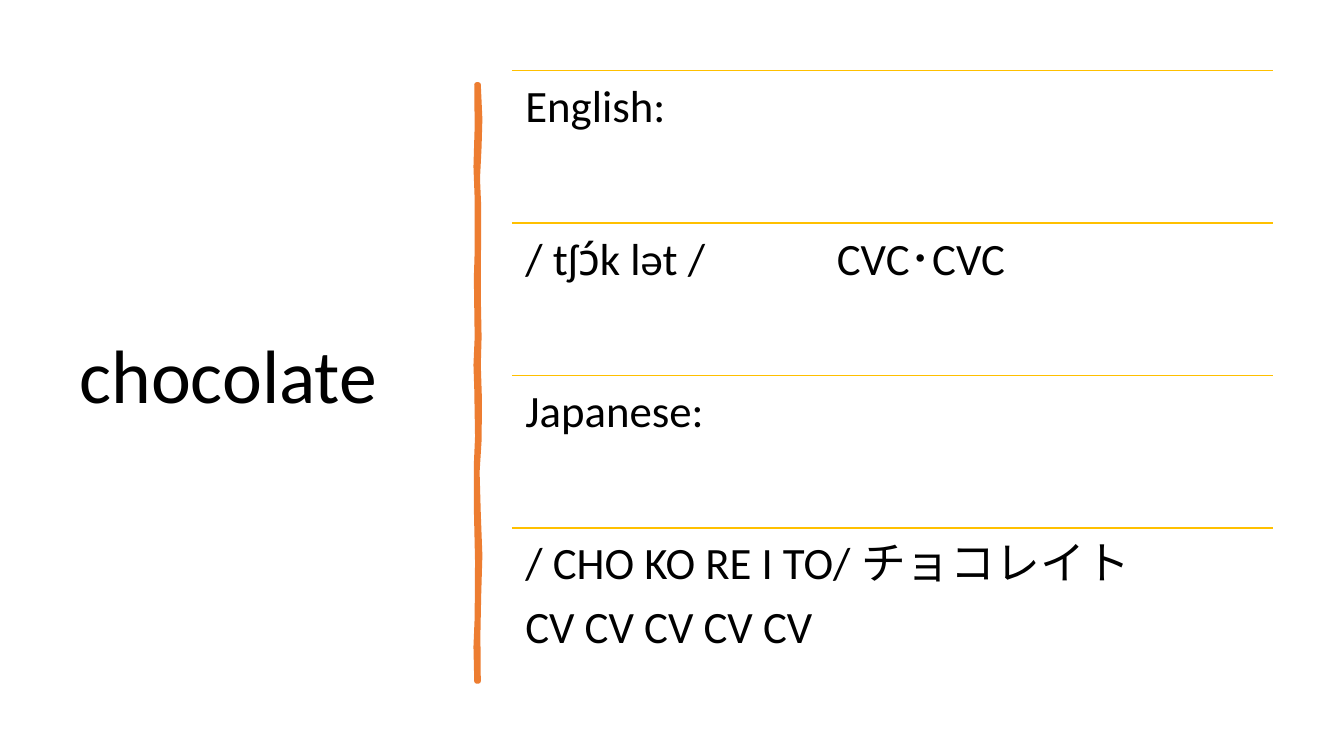
from pptx import Presentation
from pptx.util import Cm, Pt
from pptx.dml.color import RGBColor as RGB
from pptx.enum.shapes import MSO_CONNECTOR as Conn
from pptx.enum.text import MSO_ANCHOR as Anchor, MSO_AUTO_SIZE as Fit, PP_ALIGN as Align
from lxml import etree

INK = {"text": "000000", "bar": "ED7D31", "rule": "FFC000"}
NS = "{http://schemas.openxmlformats.org/drawingml/2006/main}"


def style(par, size):
    par.alignment = Align.LEFT
    par.line_spacing = 0.9
    for run in par.runs:
        run.font.size = Pt(size)
        run.font.name = "Calibri"
        run.font.color.rgb = RGB.from_string(INK["text"])


deck = Presentation()
deck.slide_width, deck.slide_height = Cm(33.87), Cm(19.05)
slide = deck.slides.add_slide(deck.slide_layouts[5])
shapes = slide.shapes

title = shapes.title
title.left, title.top, title.width, title.height = Cm(1.75), Cm(1.78), Cm(9.5), Cm(15.52)
frame = title.text_frame
frame.text = "chocolate"
frame.word_wrap = True
frame.auto_size = Fit.NONE
frame.vertical_anchor = Anchor.MIDDLE
style(frame.paragraphs[0], 54)

right = [(1206, 213), (1210, 300), (1208, 370), (1204, 450), (1207, 520), (1206, 747),
         (1208, 850), (1206, 920), (1209, 1010), (1208, 1110), (1203, 1190), (1206, 1295),
         (1210, 1400), (1207, 1500), (1205, 1600), (1206, 1717)]
left = [(1201, 1717), (1199, 1630), (1202, 1557), (1203, 1415), (1200, 1280), (1200, 1170),
        (1203, 1100), (1201, 980), (1199, 920), (1202, 851), (1200, 700), (1202, 635),
        (1202, 500), (1199, 420), (1202, 320), (1201, 213)]
pen = shapes.build_freeform(*right[0], scale=Cm(1) / 100)
pen.add_line_segments(right[1:] + left, close=True)
bar = pen.convert_to_shape()
bar.shadow.inherit = False
bar.fill.solid()
bar.fill.fore_color.rgb = RGB.from_string(INK["bar"])
bar.line.color.rgb = RGB.from_string(INK["bar"])
bar.line.width = Pt(3.25)
etree.SubElement(bar.line._get_or_add_ln(), NS + "round")

rows = [
    ["English:"],
    ["/ tʃɔ́k lət /\tCVC･CVC"],
    ["Japanese:"],
    ["/ CHO KO RE I TO/ チョコレイト", "CV CV CV CV CV"],
]
x, y, wide, step = 12.9, 1.78, 19.18, 3.84
for i, lines in enumerate(rows):
    top = Cm(y + i * step)
    rule = shapes.add_connector(Conn.STRAIGHT, Cm(x), top, Cm(x + wide), top)
    rule.line.color.rgb = RGB.from_string(INK["rule"])
    rule.line.width = Pt(1)
    etree.SubElement(rule._element.spPr, NS + "effectLst")

    frame = shapes.add_textbox(Cm(x), top, Cm(wide), Cm(step)).text_frame
    frame.word_wrap = True
    frame.margin_left = frame.margin_right = Cm(0.34)
    frame.margin_top = frame.margin_bottom = Cm(0.34)
    for j, line in enumerate(lines):
        par = frame.add_paragraph() if j else frame.paragraphs[0]
        par.text = line
        style(par, 32)
        par.space_after = Pt(11)
        if "\t" in line:
            tabs = etree.SubElement(par._p.get_or_add_pPr(), NS + "tabLst")
            etree.SubElement(tabs, NS + "tab", pos=str(Cm(7.85)), algn="l")

deck.save("out.pptx")
